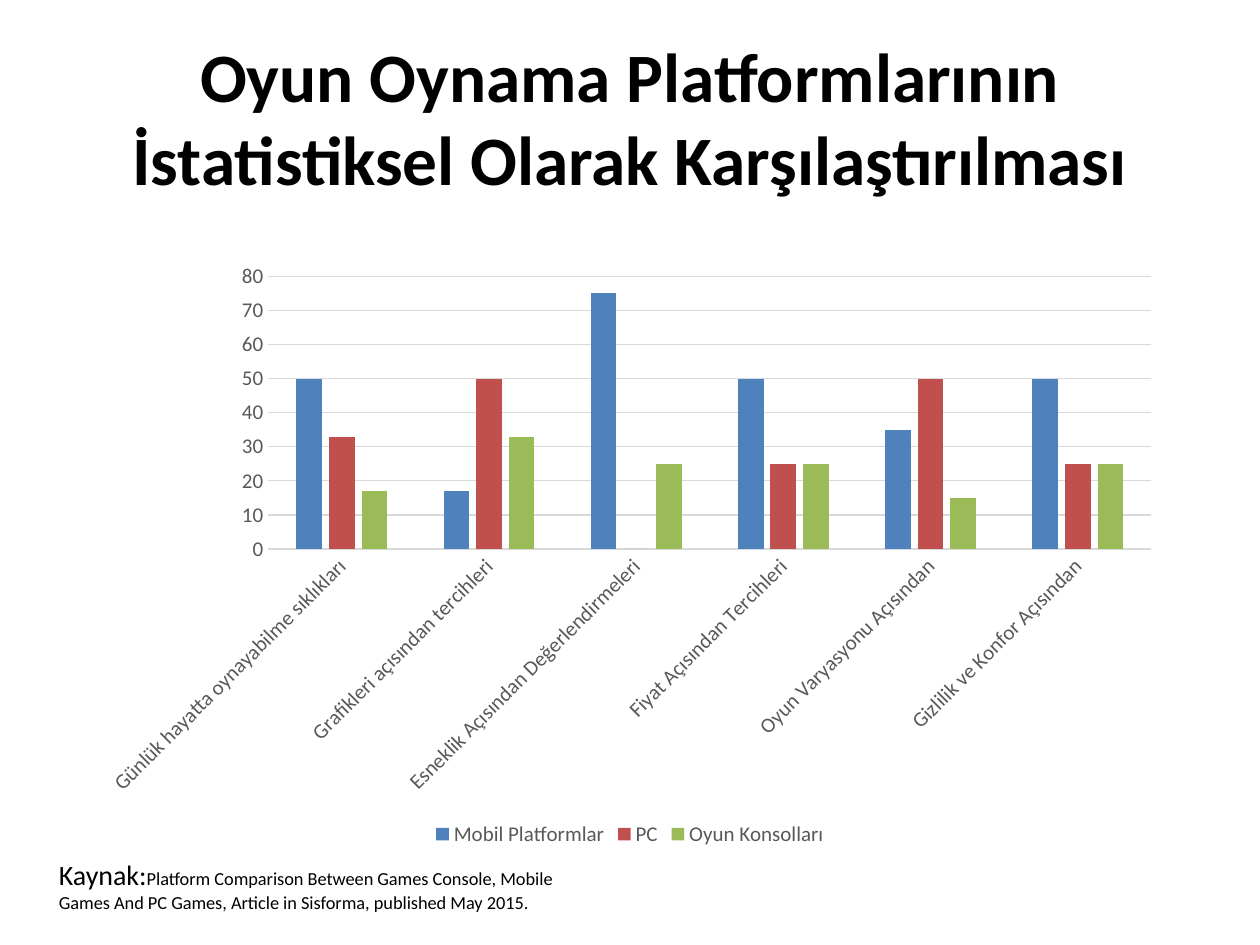
from pptx import Presentation
from pptx.chart.data import CategoryChartData
from pptx.dml.color import RGBColor
from pptx.enum import chart as ch, text as tx
from pptx.util import Inches, Pt

COLORS = {
    "text": "000000", "label": "595959", "grid": "D9D9D9",
    "Mobil Platformlar": "4F81BD", "PC": "C0504D", "Oyun Konsolları": "9BBB59",
}
ANSWERS = {
    "Mobil Platformlar": (50, 17, 75, 50, 35, 50),
    "PC": (33, 50, 0, 25, 50, 25),
    "Oyun Konsolları": (17, 33, 25, 25, 15, 25),
}


def style_font(font, size, color="text", bold=False):
    font.name, font.size, font.bold = "Calibri", Pt(size), bold
    font.color.rgb = RGBColor.from_string(COLORS[color])


def add_text(left, top, width, height, runs, anchor, align, bold=False):
    """Add a text box holding one paragraph of (text, size) runs."""
    frame = slide.shapes.add_textbox(
        Inches(left), Inches(top), Inches(width), Inches(height)).text_frame
    frame.word_wrap = True
    frame.vertical_anchor = anchor
    paragraph = frame.paragraphs[0]
    paragraph.alignment = align
    for words, size in runs:
        run = paragraph.add_run()
        run.text = words
        style_font(run.font, size, bold=bold)


prs = Presentation()
prs.slide_width, prs.slide_height = Inches(10), Inches(7.5)
slide = prs.slides.add_slide(prs.slide_layouts[6])

add_text(0.5, 0.3, 9, 1.25,
         [("Oyun Oynama Platformlarının İstatistiksel Olarak Karşılaştırılması", 39.6)],
         tx.MSO_ANCHOR.MIDDLE, tx.PP_ALIGN.CENTER, bold=True)

data = CategoryChartData()
data.categories = [
    "Günlük hayatta oynayabilme sıklıkları", "Grafikleri açısından tercihleri",
    "Esneklik Açısından Değerlendirmeleri", "Fiyat Açısından Tercihleri",
    "Oyun Varyasyonu Açısından", "Gizlilik ve Konfor Açısından",
]
for platform, values in ANSWERS.items():
    data.add_series(platform, values)
comparison = slide.shapes.add_chart(
    ch.XL_CHART_TYPE.COLUMN_CLUSTERED, Inches(0.69), Inches(2),
    Inches(8.62), Inches(4.76), data).chart
style_font(comparison.font, 10)
comparison.has_title = False
comparison.has_legend = True
comparison.legend.position = ch.XL_LEGEND_POSITION.BOTTOM
comparison.legend.include_in_layout = False
style_font(comparison.legend.font, 12, "label")

columns = comparison.plots[0]
columns.gap_width, columns.overlap = 219, -27
columns.vary_by_categories = False
for series in columns.series:
    series.format.fill.solid()
    series.format.fill.fore_color.rgb = RGBColor.from_string(COLORS[series.name])

categories, scale = comparison.category_axis, comparison.value_axis
for axis in (categories, scale):
    axis.major_tick_mark = axis.minor_tick_mark = ch.XL_TICK_MARK.NONE
    style_font(axis.tick_labels.font, 12, "label")
scale.minimum_scale, scale.maximum_scale, scale.major_unit = 0, 80, 10
scale.has_major_gridlines = True
scale.format.line.fill.background()
for line in (categories.format.line, scale.major_gridlines.format.line):
    line.width = Pt(0.75)
    line.color.rgb = RGBColor.from_string(COLORS["grid"])
# Slant the category names upwards by 45 degrees
categories.tick_labels.font._element.getparent().getparent().getparent().find(
    "{*}bodyPr").set("rot", "-2700000")

add_text(0.37, 6.76, 4.34, 0.55,
         [("Kaynak:", 16),
          ("Platform Comparison Between Games Console, Mobile Games And PC Games, "
           "Article in Sisforma, published May 2015.", 10.5)],
         tx.MSO_ANCHOR.TOP, tx.PP_ALIGN.LEFT)

prs.save("out.pptx")
